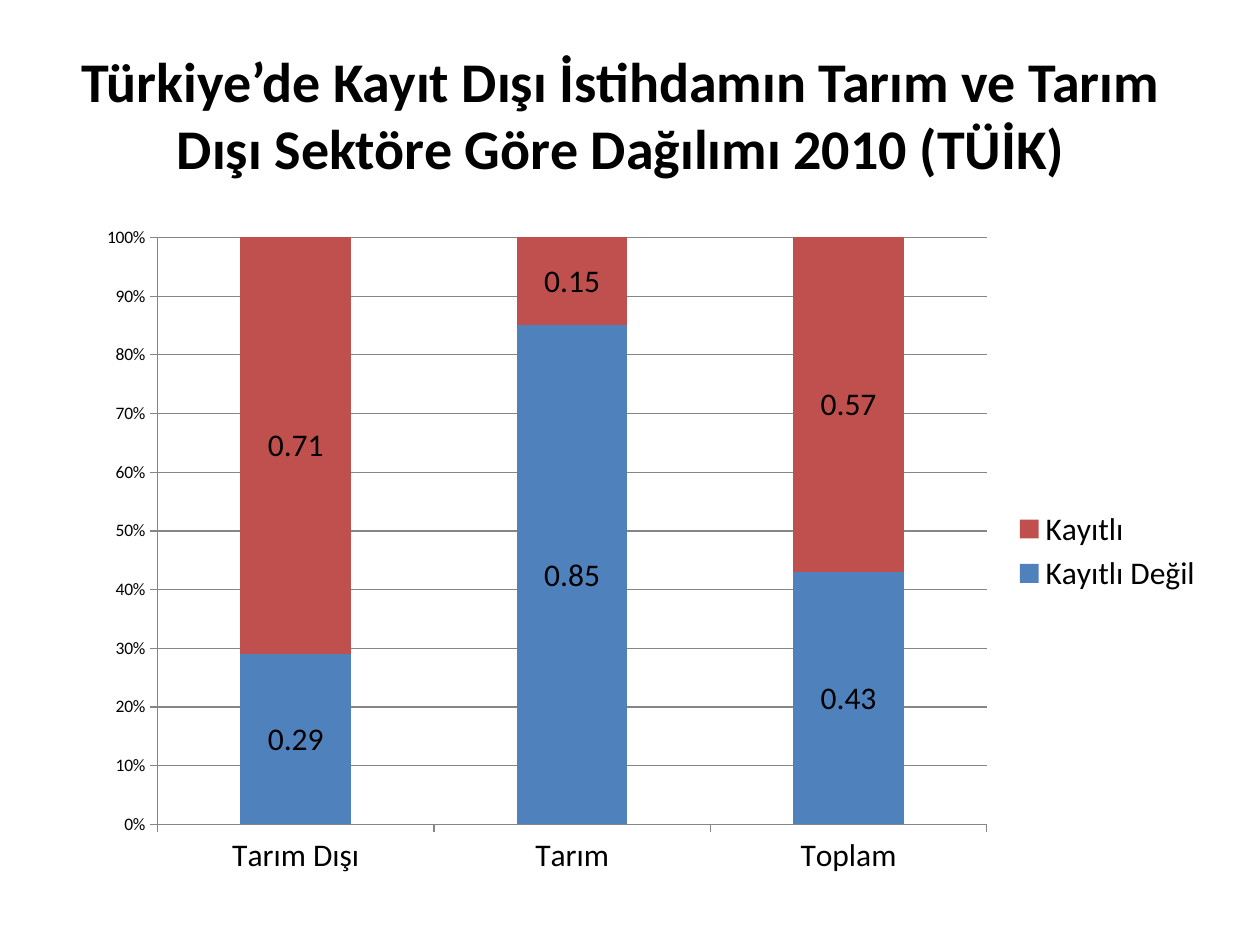
from pptx import Presentation
from pptx.chart.data import CategoryChartData
from pptx.dml.color import RGBColor
from pptx.enum.chart import XL_CHART_TYPE as ChartType
from pptx.enum.chart import XL_LEGEND_POSITION as LegendPosition
from pptx.enum.chart import XL_TICK_MARK as TickMark
from pptx.enum.text import MSO_ANCHOR, PP_ALIGN
from pptx.util import Pt

BLACK = RGBColor(0x00, 0x00, 0x00)
GREY = RGBColor(0x86, 0x86, 0x86)
BLUE = RGBColor(0x4F, 0x81, 0xBD)
RED = RGBColor(0xC0, 0x50, 0x4D)

TITLE = "Türkiye’de Kayıt Dışı İstihdamın Tarım ve Tarım Dışı Sektöre Göre Dağılımı 2010 (TÜİK)"
SECTORS = ["Tarım Dışı", "Tarım", "Toplam"]
EMPLOYMENT = [
    ("Kayıtlı Değil", [0.29, 0.85, 0.43], BLUE),
    ("Kayıtlı ", [0.71, 0.15, 0.57], RED),
]


class SlideBuilder:
    """Holds the text style and the slide being filled."""

    font_name = "Calibri"
    title_size = 32
    label_size = 18
    scale_size = 10

    def __init__(self, slide):
        self.slide = slide

    def style_font(self, font, size, bold=False):
        font.name = self.font_name
        font.size = Pt(size)
        font.bold = bold
        font.color.rgb = BLACK

    def add_title(self, text, left, top, width, height):
        title = self.slide.shapes.title
        title.left, title.top = Pt(left), Pt(top)
        title.width, title.height = Pt(width), Pt(height)
        frame = title.text_frame
        frame.word_wrap = True
        frame.vertical_anchor = MSO_ANCHOR.MIDDLE
        paragraph = frame.paragraphs[0]
        paragraph.alignment = PP_ALIGN.CENTER
        run = paragraph.add_run()
        run.text = text
        self.style_font(run.font, self.title_size, bold=True)

    def add_share_chart(self, categories, series_rows, left, top, width, height):
        """Add columns stacked to 100 % with value labels and a legend."""
        data = CategoryChartData(number_format="0.00")
        data.categories = categories
        for name, values, _ in series_rows:
            data.add_series(name, values)
        chart = self.slide.shapes.add_chart(
            ChartType.COLUMN_STACKED_100,
            Pt(left), Pt(top), Pt(width), Pt(height), data,
        ).chart
        self.style_font(chart.font, self.scale_size)
        chart.has_title = False

        plot = chart.plots[0]
        plot.gap_width = 150
        plot.overlap = 100
        plot.vary_by_categories = False
        for series, (_, _, color) in zip(plot.series, series_rows):
            series.format.fill.solid()
            series.format.fill.fore_color.rgb = color
            labels = series.data_labels
            labels.show_value = True
            labels.number_format = "0.00"
            labels.number_format_is_linked = False
            self.style_font(labels.font, self.label_size)

        self.style_axis(chart.category_axis, self.label_size)
        value_axis = chart.value_axis
        self.style_axis(value_axis, self.scale_size)
        value_axis.minimum_scale, value_axis.maximum_scale = 0, 1
        value_axis.major_unit = 0.1
        value_axis.tick_labels.number_format = "0%"
        value_axis.tick_labels.number_format_is_linked = False
        value_axis.has_major_gridlines = True
        value_axis.major_gridlines.format.line.color.rgb = GREY

        chart.has_legend = True
        chart.legend.position = LegendPosition.RIGHT
        chart.legend.include_in_layout = False
        self.style_font(chart.legend.font, self.label_size)

    def style_axis(self, axis, size):
        axis.major_tick_mark = TickMark.OUTSIDE
        axis.minor_tick_mark = TickMark.NONE
        axis.format.line.color.rgb = GREY
        self.style_font(axis.tick_labels.font, size)


def main():
    presentation = Presentation()
    presentation.slide_width, presentation.slide_height = Pt(720), Pt(540)
    title_only = presentation.slide_layouts[5]
    builder = SlideBuilder(presentation.slides.add_slide(title_only))
    builder.add_title(TITLE, 31, 20, 648, 90)
    builder.add_share_chart(SECTORS, EMPLOYMENT, 48.2, 122.4, 646.6, 385.2)
    presentation.save("out.pptx")


if __name__ == "__main__":
    main()
